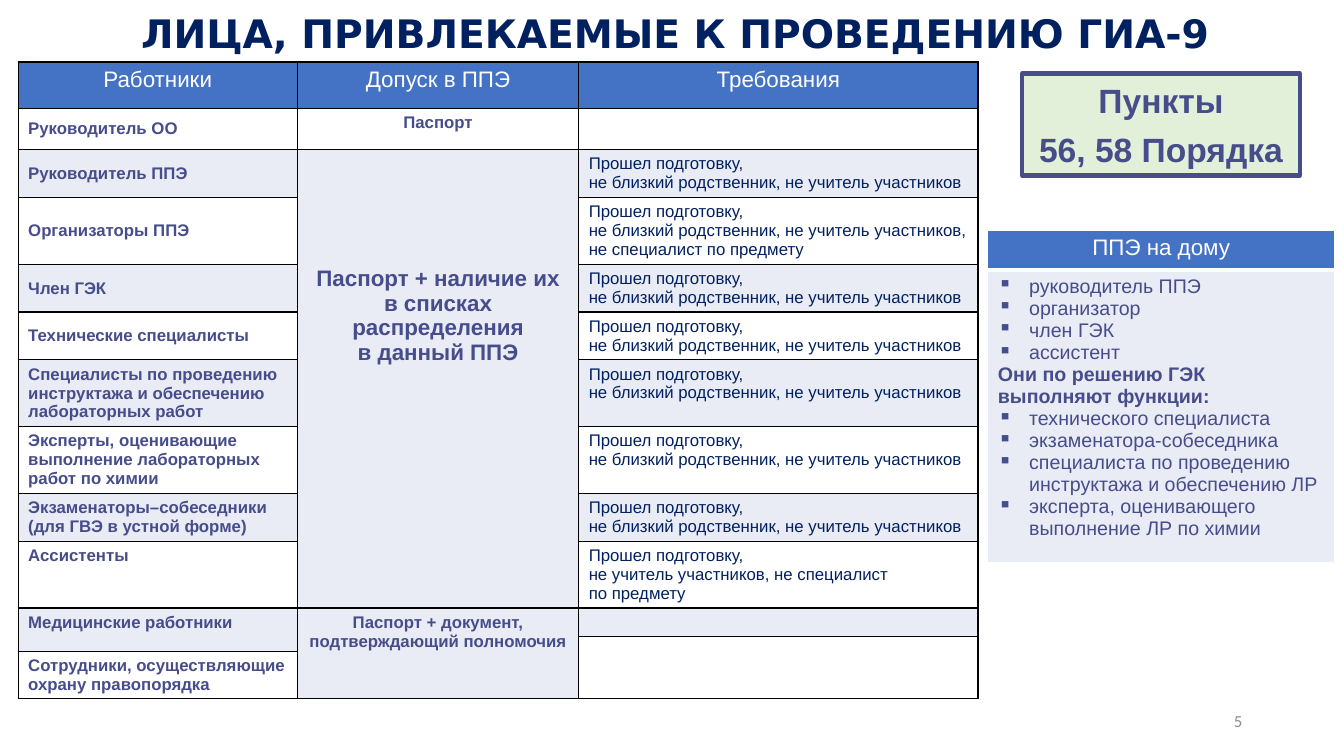
from dataclasses import dataclass

from lxml.etree import SubElement
from pptx import Presentation
from pptx.dml.color import RGBColor
from pptx.enum.shapes import MSO_SHAPE
from pptx.enum.text import MSO_ANCHOR, PP_ALIGN
from pptx.oxml.ns import qn
from pptx.util import Inches, Pt

SLIDE_W, SLIDE_H = Inches(13.33), Inches(7.5)


@dataclass(frozen=True)
class Theme:
    """Colours, fonts and type sizes of the slide."""
    navy: str = "002060"
    violet: str = "464D8A"
    header: str = "4472C4"
    band: str = "E9EBF5"
    white: str = "FFFFFF"
    black: str = "000000"
    green: str = "E2F0D9"
    grey: str = "8C8C8C"
    body_font: str = "Arial"
    title_font: str = "DejaVu Sans"
    number_font: str = "Calibri"
    title: int = 28
    badge: int = 24
    heading: int = 16
    duty: int = 14
    body: int = 12


THEME = Theme()
PREPARED = "Прошел подготовку,"
USUAL = [PREPARED, "не близкий родственник, не учитель участников"]
STAFF = [
    ("Руководитель ОО", []),
    ("Руководитель ППЭ", USUAL),
    ("Организаторы ППЭ",
     [PREPARED, "не близкий родственник, не учитель участников, не специалист по предмету"]),
    ("Член ГЭК", USUAL),
    ("Технические специалисты", USUAL),
    ("Специалисты по проведению инструктажа и обеспечению лабораторных работ", USUAL),
    ("Эксперты, оценивающие выполнение лабораторных работ по химии", USUAL),
    ("Экзаменаторы–собеседники (для ГВЭ в устной форме)", USUAL),
    ("Ассистенты", [PREPARED, "не учитель участников, не специалист\nпо предмету"]),
    ("Медицинские работники", []),
    ("", []),
    ("Сотрудники, осуществляющие охрану правопорядка", []),
]
HOME_ROLES = ["руководитель ППЭ", "организатор", "член ГЭК", "ассистент"]
HOME_DUTIES = [
    "технического специалиста",
    "экзаменатора-собеседника",
    "специалиста по проведению инструктажа и обеспечению ЛР",
    "эксперта, оценивающего выполнение ЛР по химии",
]


def across(percent):
    """Turn a percentage of the slide's width into a length."""
    return int(SLIDE_W * percent / 100)


def down(percent):
    """Turn a percentage of the slide's height into a length."""
    return int(SLIDE_H * percent / 100)


def place(left, top, width, height):
    """Turn percentages of the slide into a position and a size."""
    return across(left), down(top), across(width), down(height)


def colour(value):
    """Make a colour from its hexadecimal name."""
    return RGBColor.from_string(value)


def write(frame, text, size=THEME.body, ink=THEME.violet, bold=False, font=THEME.body_font,
          align=PP_ALIGN.LEFT, after=0, bullet=None, first=True):
    """Write one formatted paragraph into a text frame."""
    paragraph = frame.paragraphs[0] if first else frame.add_paragraph()
    paragraph.text = text
    paragraph.alignment = align
    paragraph.space_after = Pt(after)
    for run in paragraph.runs:
        run.font.size, run.font.bold, run.font.name = Pt(size), bold, font
        run.font.color.rgb = colour(ink)
    if bullet:
        properties = paragraph._p.get_or_add_pPr()
        properties.set("marL", str(Inches(0.31)))
        properties.set("indent", str(-Inches(0.31)))
        SubElement(properties, qn("a:buChar"), char=bullet)


def draw_borders(cell, line, bottom=1):
    """Give a table cell a solid line on each side."""
    properties = cell._tc.get_or_add_tcPr()
    for place_in_order, side in enumerate("LRTB"):
        width = bottom if side == "B" else 1
        border = SubElement(properties, qn(f"a:ln{side}"), w=str(Pt(width)))
        SubElement(SubElement(border, qn("a:solidFill")), qn("a:srgbClr"), val=line)
        properties.insert(place_in_order, border)


def paint(cell, fill, line, bottom=1):
    """Fill and outline a table cell."""
    cell.fill.solid()
    cell.fill.fore_color.rgb = colour(fill)
    draw_borders(cell, line, bottom)


def shrink_empty(cell):
    """Keep an empty cell from stretching its row."""
    if not cell.text_frame.text:
        cell.margin_top = cell.margin_bottom = 0
        SubElement(cell.text_frame.paragraphs[0]._p, qn("a:endParaRPr"), sz="600")


def add_grid(slide, left, top, columns, rows):
    """Add a table with the given column and row shares."""
    table = slide.shapes.add_table(
        len(rows), len(columns), *place(left, top, sum(columns), sum(rows))).table
    for column, width in zip(table.columns, columns):
        column.width = across(width)
    for row, height in zip(table.rows, rows):
        row.height = down(height)
    return table


def write_heading(cell, text):
    """Write a table heading."""
    write(cell.text_frame, text, size=THEME.heading, ink=THEME.white, align=PP_ALIGN.CENTER)


def add_staff_table(slide):
    """Add the table of staff, admission and requirements."""
    two, three = 6.3, 8.85
    rows = [6.1, 5.5, two, three, two, two, three, three, two, three, 3.8, 1.9, two]
    table = add_grid(slide, 1.35, 8.2, [20.78, 20.93, 29.71], rows)
    last = len(rows) - 1
    for column, text in enumerate(["Работники", "Допуск в ППЭ", "Требования"]):
        write_heading(table.cell(0, column), text)
    for row, (worker, requirements) in enumerate(STAFF, 1):
        name = table.cell(row, 0)
        if worker:
            write(name.text_frame, worker, bold=True)
        if row <= 6:
            name.vertical_anchor = MSO_ANCHOR.MIDDLE
        for index, text in enumerate(requirements):
            write(table.cell(row, 2).text_frame, text, ink=THEME.navy, first=index == 0)
    admissions = [
        (1, "Паспорт", THEME.body),
        (2, "Паспорт + наличие их в списках распределения\nв данный ППЭ", THEME.heading),
        (10, "Паспорт + документ, подтверждающий полномочия", THEME.body),
    ]
    for row, text, size in admissions:
        write(table.cell(row, 1).text_frame, text, size=size, bold=True, align=PP_ALIGN.CENTER)
    table.cell(2, 1).margin_top = down(15.4)
    for row in range(len(rows)):
        banded = THEME.band if row % 2 == 0 and row < last else THEME.white
        for column in range(3):
            cell = table.cell(row, column)
            paint(cell, banded if row else THEME.header, THEME.black)
            shrink_empty(cell)
    for column, start, end in [(1, 2, 9), (0, 10, 11), (1, 10, last), (2, 11, last)]:
        table.cell(start, column).merge(table.cell(end, column))


def add_home_table(slide):
    """Add the table about exams held at home."""
    table = add_grid(slide, 73.5, 30.5, [25.8], [5.25, 38.7])
    heading, duties = table.cell(0, 0), table.cell(1, 0)
    write_heading(heading, "ППЭ на дому")
    lines = [(text, "▪") for text in HOME_ROLES]
    lines += [("Они по решению ГЭК выполняют функции:", None)]
    lines += [(text, "▪") for text in HOME_DUTIES]
    for index, (text, bullet) in enumerate(lines):
        write(duties.text_frame, text, size=THEME.duty, bold=bullet is None,
              bullet=bullet, first=index == 0)
    paint(heading, THEME.header, THEME.white, bottom=3)
    paint(duties, THEME.band, THEME.white)


def add_badge(slide):
    """Add the framed reference to the regulation."""
    badge = slide.shapes.add_shape(MSO_SHAPE.RECTANGLE, *place(76.07, 9.73, 20.63, 13.5))
    badge.shadow.inherit = False
    badge.fill.solid()
    badge.fill.fore_color.rgb = colour(THEME.green)
    badge.line.color.rgb = colour(THEME.violet)
    badge.line.width = Pt(3)
    for index, text in enumerate(["Пункты", "56, 58 Порядка"]):
        write(badge.text_frame, text, size=THEME.badge, bold=True, after=6,
              align=PP_ALIGN.CENTER, first=index == 0)


def add_title(slide):
    """Move and format the title placeholder."""
    title = slide.shapes.title
    title.left, title.top, title.width, title.height = place(0.45, 0.53, 99.55, 7.6)
    title.text_frame.vertical_anchor = MSO_ANCHOR.TOP
    write(title.text_frame, "ЛИЦА, ПРИВЛЕКАЕМЫЕ К ПРОВЕДЕНИЮ ГИА-9", size=THEME.title,
          ink=THEME.navy, bold=True, font=THEME.title_font, align=PP_ALIGN.CENTER)


def add_page_number(slide):
    """Add the page number at the lower right."""
    number = slide.shapes.add_textbox(*place(70.67, 92.67, 22.5, 5.33)).text_frame
    number.word_wrap = True
    number.vertical_anchor = MSO_ANCHOR.MIDDLE
    write(number, "5", ink=THEME.grey, font=THEME.number_font, align=PP_ALIGN.RIGHT)


def main():
    """Build and save the slide."""
    deck = Presentation()
    deck.slide_width, deck.slide_height = SLIDE_W, SLIDE_H
    slide = deck.slides.add_slide(deck.slide_layouts[5])
    for add_part in (add_title, add_staff_table, add_badge, add_home_table, add_page_number):
        add_part(slide)
    deck.save("out.pptx")


if __name__ == "__main__":
    main()
